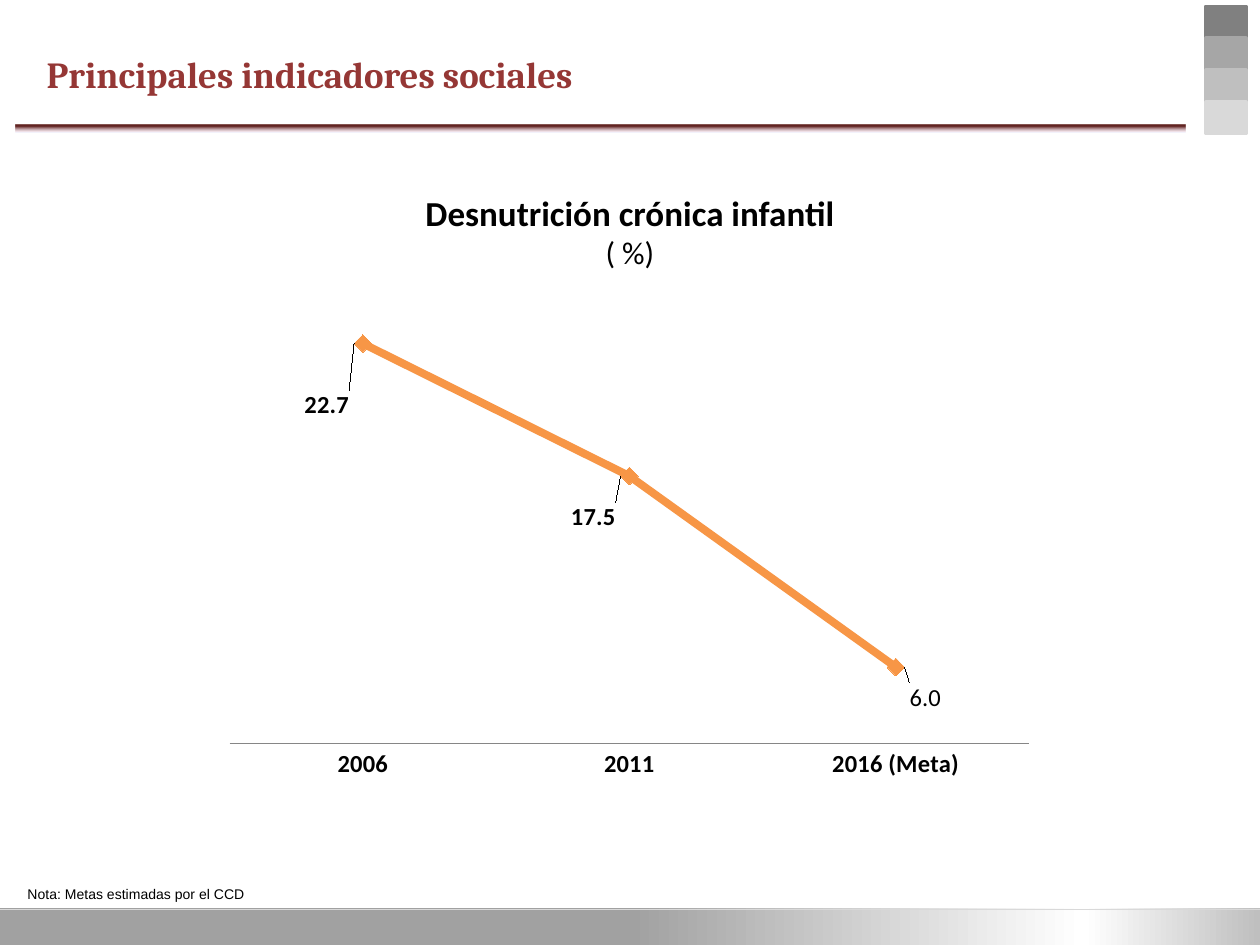
from lxml import etree
from pptx import Presentation
from pptx import util as u
from pptx.chart.data import CategoryChartData
from pptx.dml.color import RGBColor
from pptx.enum import chart as ch, shapes, text
from pptx.oxml import parse_xml
from pptx.oxml.ns import nsdecls, qn

COLORS = {"title": "953735", "text": "000000", "line": "F79646",
          "axis": "868686", "edge": "D9D9D9"}
SWATCHES = ["808080", "A6A6A6", "BFBFBF", "D9D9D9"]
# Gradient stops: position %, colour, opacity %
FOOTER_STOPS = [(50, "A1A1A1", 100), (86, "FFFFFF", 100), (100, "BFBFBF", 100)]
RULE_STOPS = [(23, "632523", 100), (97, "FFEBFA", 43), (100, "85C2FF", 0)]

TITLE = "Principales indicadores sociales"
HEADING = [("Desnutrición crónica infantil", 20, True), ("( %)", 18, False)]
NOTE = "Nota: Metas estimadas por el CCD"
POINTS = [("2006", 22.7), ("2011", 17.5), ("2016 (Meta)", 10)]
# Label side, downward shift as a share of the chart height, own text
LABELS = [(ch.XL_LABEL_POSITION.LEFT, 0.12, None),
          (ch.XL_LABEL_POSITION.LEFT, 0.08, None),
          (ch.XL_LABEL_POSITION.RIGHT, 0.06, "6.0")]


def rgb(value):
    return RGBColor.from_string(value)


def style(font, size, name, color=COLORS["text"], bold=False):
    font.size, font.name, font.bold = u.Pt(size), name, bold
    font.color.rgb = rgb(color)


def add_rectangle(slide, left, top, width, height):
    shape = slide.shapes.add_shape(
        shapes.MSO_SHAPE.RECTANGLE, u.Inches(left), u.Inches(top),
        u.Inches(width), u.Inches(height))
    shape.shadow.inherit = False
    shape.line.fill.background()
    return shape


def fill_gradient(shape, stops, angle):
    marks = "".join(
        f'<a:gs pos="{position * 1000}"><a:srgbClr val="{color}">'
        f'<a:alpha val="{opacity * 1000}"/></a:srgbClr></a:gs>'
        for position, color, opacity in stops)
    gradient = parse_xml(
        f'<a:gradFill {nsdecls("a")} rotWithShape="1"><a:gsLst>{marks}</a:gsLst>'
        f'<a:lin ang="{angle * 60000}" scaled="0"/></a:gradFill>')
    shape.element.spPr.find(qn("a:prstGeom")).addnext(gradient)


def add_text(slide, box, lines, font_name, align, wrap=True):
    frame = slide.shapes.add_textbox(*map(u.Inches, box)).text_frame
    frame.word_wrap = wrap
    frame.text = "\n".join(line for line, _, _ in lines)
    for paragraph, (_, size, bold) in zip(frame.paragraphs, lines):
        paragraph.alignment = align
        style(paragraph.runs[0].font, size, font_name, bold=bold)


def manual_layout(**values):
    parts = "".join(f'<c:{tag} val="{value}"/>' for tag, value in values.items())
    return parse_xml(f'<c:layout {nsdecls("c")}><c:manualLayout>{parts}'
                     '</c:manualLayout></c:layout>')


def add_decoration(slide):
    fill_gradient(add_rectangle(slide, 0, 7.21, 10, 0.29), FOOTER_STOPS, 0)
    edge = slide.shapes.add_connector(
        shapes.MSO_CONNECTOR.STRAIGHT, 0, u.Inches(7.22), u.Inches(10), u.Inches(7.22))
    edge.line.color.rgb, edge.line.width = rgb(COLORS["edge"]), u.Pt(0.75)
    etree.SubElement(edge.element.spPr, qn("a:effectLst"))
    for index, color in enumerate(SWATCHES):
        swatch = add_rectangle(slide, 9.57, 0.05 + index * 0.253, 0.32, 0.25)
        swatch.fill.solid()
        swatch.fill.fore_color.rgb = swatch.line.color.rgb = rgb(color)
        swatch.line.width = u.Pt(2)
    fill_gradient(add_rectangle(slide, 0.12, 0.99, 9.29, 0.06), RULE_STOPS, 90)


def add_chart(slide):
    data = CategoryChartData(number_format="0.0")
    data.categories = [year for year, _ in POINTS]
    data.add_series("Desnutrición", [value for _, value in POINTS])
    chart = slide.shapes.add_chart(
        ch.XL_CHART_TYPE.LINE_MARKERS_STACKED, u.Inches(1.69), u.Inches(2.18),
        u.Inches(6.61), u.Inches(4.09), data).chart
    style(chart.font, 10, "Calibri")
    chart.has_legend = chart.has_title = False

    plot_area = chart.plots[0]._element.getparent()
    for layout in plot_area.findall(qn("c:layout")):
        plot_area.remove(layout)
    plot_area.insert(0, manual_layout(layoutTarget="inner", xMode="edge", yMode="edge",
                                      x=0.02, y=0.02, w=0.96, h=0.89))

    values = chart.value_axis
    values.minimum_scale, values.maximum_scale = 7, 25
    values.has_major_gridlines = values.visible = False
    years = chart.category_axis
    years.major_tick_mark = ch.XL_TICK_MARK.NONE
    years.format.line.color.rgb = rgb(COLORS["axis"])
    style(years.tick_labels.font, 14, "Calibri", bold=True)

    chart.plots[0].vary_by_categories = False
    series = chart.plots[0].series[0]
    series.smooth = False
    series.format.line.color.rgb = rgb(COLORS["line"])
    series.format.line.width = u.Pt(4.5)
    series.marker.style, series.marker.size = ch.XL_MARKER_STYLE.DIAMOND, 10
    series.marker.format.fill.solid()
    series.marker.format.fill.fore_color.rgb = rgb(COLORS["line"])
    series.marker.format.line.color.rgb = rgb(COLORS["line"])

    for index, (side, shift, own_text) in enumerate(LABELS):
        label = series.points[index].data_label
        if own_text:
            label.text_frame.text = own_text
            style(label.text_frame.paragraphs[0].runs[0].font, 14, "Calibri")
        else:
            style(label.font, 14, "Calibri", bold=True)
        label.position = side
    for element, (_, shift, _) in zip(series._element.iter(qn("c:dLbl")), LABELS):
        element.insert(1, manual_layout(x=0, y=shift))


def main():
    presentation = Presentation()
    presentation.slide_width, presentation.slide_height = u.Inches(10), u.Inches(7.5)
    slide = presentation.slides.add_slide(presentation.slide_layouts[5])
    add_decoration(slide)
    add_chart(slide)
    add_text(slide, (3.27, 1.47, 3.46, 0.62), HEADING, "Calibri", text.PP_ALIGN.CENTER)

    title = slide.shapes.title
    title.left, title.top = u.Inches(0.27), u.Inches(0.36)
    title.width, title.height = u.Inches(7.37), u.Inches(0.63)
    title.text_frame.text = TITLE
    title.text_frame.vertical_anchor = text.MSO_ANCHOR.TOP
    paragraph = title.text_frame.paragraphs[0]
    paragraph.alignment = text.PP_ALIGN.LEFT
    style(paragraph.runs[0].font, 21, "Cambria", COLORS["title"], True)

    add_text(slide, (0.12, 6.98, 3.07, 0.24), [(NOTE, 8, False)], "Arial",
             text.PP_ALIGN.LEFT)
    presentation.save("out.pptx")


if __name__ == "__main__":
    main()
